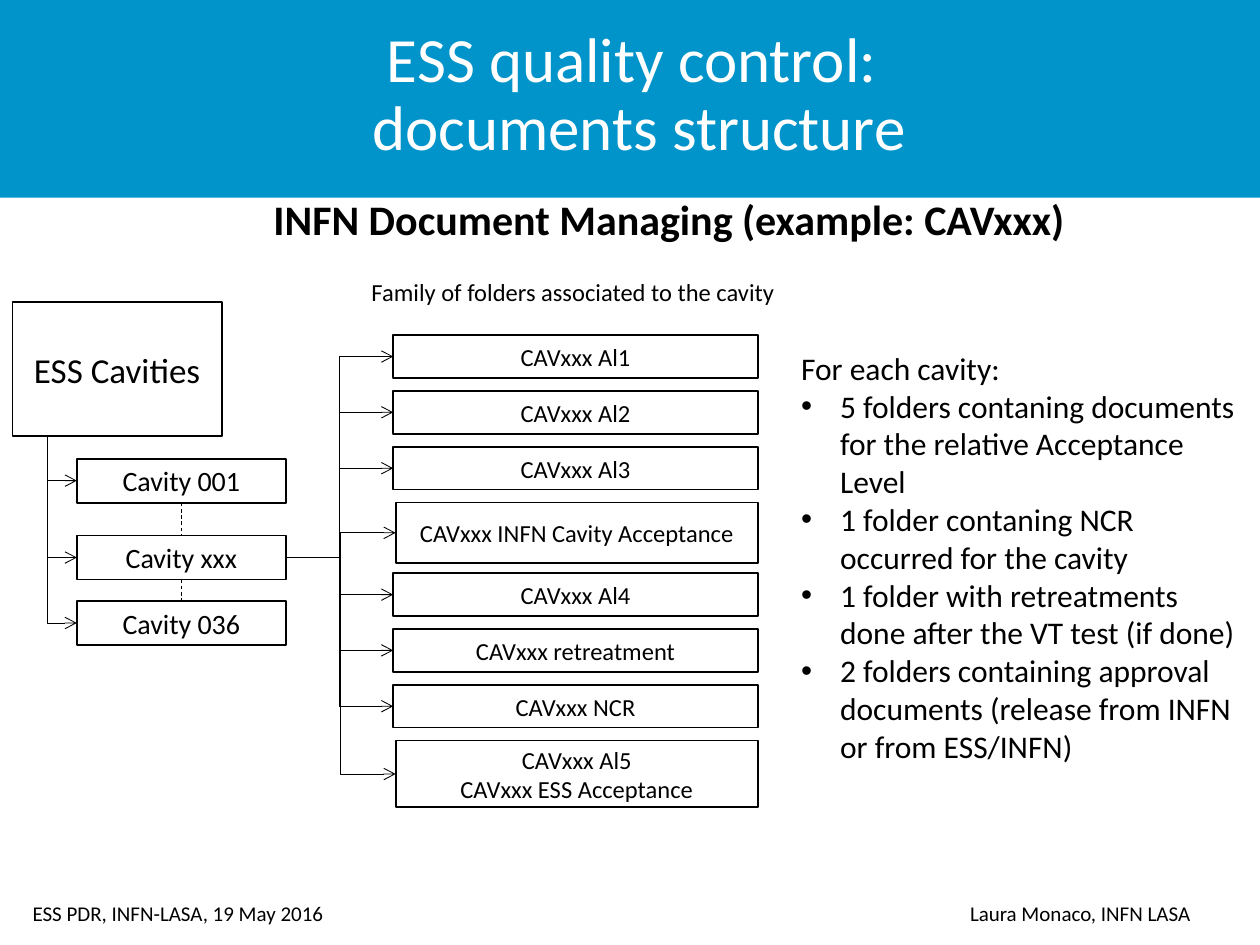
"""Build the ESS quality control slide with its folder tree."""
from lxml import etree
from pptx import Presentation, util as u
from pptx.dml import color
from pptx.enum import dml, shapes, text
from pptx.oxml import ns

COLORS = {"band": "0094CA", "ink": "000000", "light": "FFFFFF"}
COLUMNS, ROWS = 100, 75


class SlideBuilder:
    """Draws styled elements on a grid of columns and rows."""

    def __init__(self, presentation):
        self.font = "Calibri"
        self.column = presentation.slide_width / COLUMNS
        self.row = presentation.slide_height / ROWS
        self.slide = presentation.slides.add_slide(presentation.slide_layouts[6])

    def color(self, name):
        return color.RGBColor.from_string(COLORS[name])

    def place(self, left, top, width, height):
        return (round(left * self.column), round(top * self.row),
                round(width * self.column), round(height * self.row))

    def fill_paragraph(self, paragraph, content, size, ink="ink", bold=False,
                       align=text.PP_ALIGN.LEFT):
        paragraph.text = content
        paragraph.alignment = align
        paragraph.font.name = self.font
        paragraph.font.size = u.Pt(size)
        paragraph.font.bold = bold
        paragraph.font.color.rgb = self.color(ink)

    def bullet(self, paragraph, indent):
        properties = paragraph._p.get_or_add_pPr()
        properties.set("marL", str(round(indent * self.column)))
        properties.set("indent", str(-round(indent * self.column)))
        font = etree.SubElement(properties, ns.qn("a:buFont"))
        font.set("typeface", "Arial")
        etree.SubElement(properties, ns.qn("a:buChar")).set("char", "•")

    def label(self, area, content, size, **style):
        frame = self.slide.shapes.add_textbox(*self.place(*area)).text_frame
        frame.word_wrap = True
        self.fill_paragraph(frame.paragraphs[0], content, size, **style)
        return frame

    def title(self, area, content, size):
        frame = self.label(area, content, size, ink="light",
                           align=text.PP_ALIGN.CENTER)
        frame.vertical_anchor = text.MSO_ANCHOR.MIDDLE
        frame.paragraphs[0].line_spacing = 0.9

    def bullets(self, area, heading, items, size, indent):
        frame = self.label(area, heading, size)
        for item in items:
            paragraph = frame.add_paragraph()
            self.bullet(paragraph, indent)
            self.fill_paragraph(paragraph, item, size)

    def rectangle(self, area):
        shape = self.slide.shapes.add_shape(
            shapes.MSO_SHAPE.RECTANGLE, *self.place(*area))
        shape.shadow.inherit = False
        return shape

    def band(self, area):
        shape = self.rectangle(area)
        shape.fill.solid()
        shape.fill.fore_color.rgb = self.color("band")
        shape.line.fill.background()

    def box(self, area, content, size):
        shape = self.rectangle(area)
        shape.fill.background()
        shape.line.color.rgb = self.color("ink")
        shape.line.width = u.Pt(1)
        shape.text_frame.word_wrap = True
        shape.text_frame.vertical_anchor = text.MSO_ANCHOR.MIDDLE
        self.fill_paragraph(shape.text_frame.paragraphs[0], content, size,
                            align=text.PP_ALIGN.CENTER)
        return shape

    def connector(self, kind, start, end):
        connector = self.slide.shapes.add_connector(kind, *start, *end)
        connector.line.color.rgb = self.color("ink")
        connector.line.width = u.Pt(0.5)
        etree.SubElement(connector._element.spPr, ns.qn("a:effectLst"))
        return connector

    def arrow(self, start, target):
        end = target.left, target.top + target.height // 2
        connector = self.connector(shapes.MSO_CONNECTOR.ELBOW, start, end)
        line = connector.line._get_or_add_ln()
        etree.SubElement(line, ns.qn("a:tailEnd")).set("type", "arrow")
        return connector

    def branch(self, source, target):
        start = source.left + source.width, source.top + source.height // 2
        connector = self.arrow(start, target)
        connector.begin_connect(source, 3)
        connector.end_connect(target, 1)

    def dashes(self, upper, lower):
        center = upper.left + upper.width // 2
        connector = self.connector(
            shapes.MSO_CONNECTOR.STRAIGHT,
            (center, upper.top + upper.height), (center, lower.top))
        connector.line.dash_style = dml.MSO_LINE.DASH
        connector.begin_connect(upper, 2)
        connector.end_connect(lower, 0)


def main():
    presentation = Presentation()
    presentation.slide_width, presentation.slide_height = u.Inches(10), u.Inches(7.5)
    builder = SlideBuilder(presentation)

    builder.band((0, 0, COLUMNS, 15.7))
    builder.title((18.4, 0.6, 63.5, 14.1),
                  "ESS quality control:\v documents structure", 36)
    builder.label((-0.2, 14.9, 106.6, 7.2), "INFN Document Managing (example: CAVxxx)",
                  24, bold=True, align=text.PP_ALIGN.CENTER)
    builder.label((28.5, 21.5, 37.3, 3.4),
                  "Family of folders associated to the cavity", 14)

    root = builder.box((1, 24, 16.6, 10.6), "ESS Cavities", 20)
    trunk_start = round(1.5 * builder.column), root.top + root.height
    cavities = [builder.box((6.1, top, 16.6, 3.5), f"Cavity {name}", 16)
                for name, top in (("001", 36.4), ("xxx", 42.5), ("036", 47.7))]
    for cavity in cavities:
        builder.arrow(trunk_start, cavity)
    for upper, lower in zip(cavities, cavities[1:]):
        builder.dashes(upper, lower)

    folders = [
        ("Al1", 31.2, 3.4, 1.03),
        ("Al2", 31.2, 3.4, 1.03),
        ("Al3", 31.2, 3.4, 1.03),
        ("INFN Cavity Acceptance", 31.4, 4.8, 0.8),
        ("Al4", 31.2, 3.4, 1.03),
        ("retreatment", 31.2, 3.4, 1.03),
        ("NCR", 31.2, 3.4, 1.03),
        ("Al5\vCAVxxx ESS Acceptance", 31.4, 5.3, 0),
    ]
    right, top = 60.15, 26.6
    for name, left, height, gap in folders:
        folder = builder.box((left, top, right - left, height), f"CAVxxx {name}", 14)
        builder.branch(cavities[1], folder)
        top += height + gap

    builder.bullets((62.6, 27.2, 37.4, 34.3), "For each cavity:", [
        "5 folders contaning documents for the relative Acceptance Level",
        "1 folder contaning NCR occurred for the cavity",
        "1 folder with retreatments done after the VT test (if done)",
        "2 folders containing approval documents (release from INFN or from ESS/INFN)",
    ], 18, 3.1)
    builder.label((1.6, 71, 33.8, 4), "ESS PDR, INFN-LASA, 19 May 2016", 12)
    builder.label((76, 71, 22.5, 4), "Laura Monaco, INFN LASA", 12)
    presentation.save("out.pptx")


if __name__ == "__main__":
    main()
